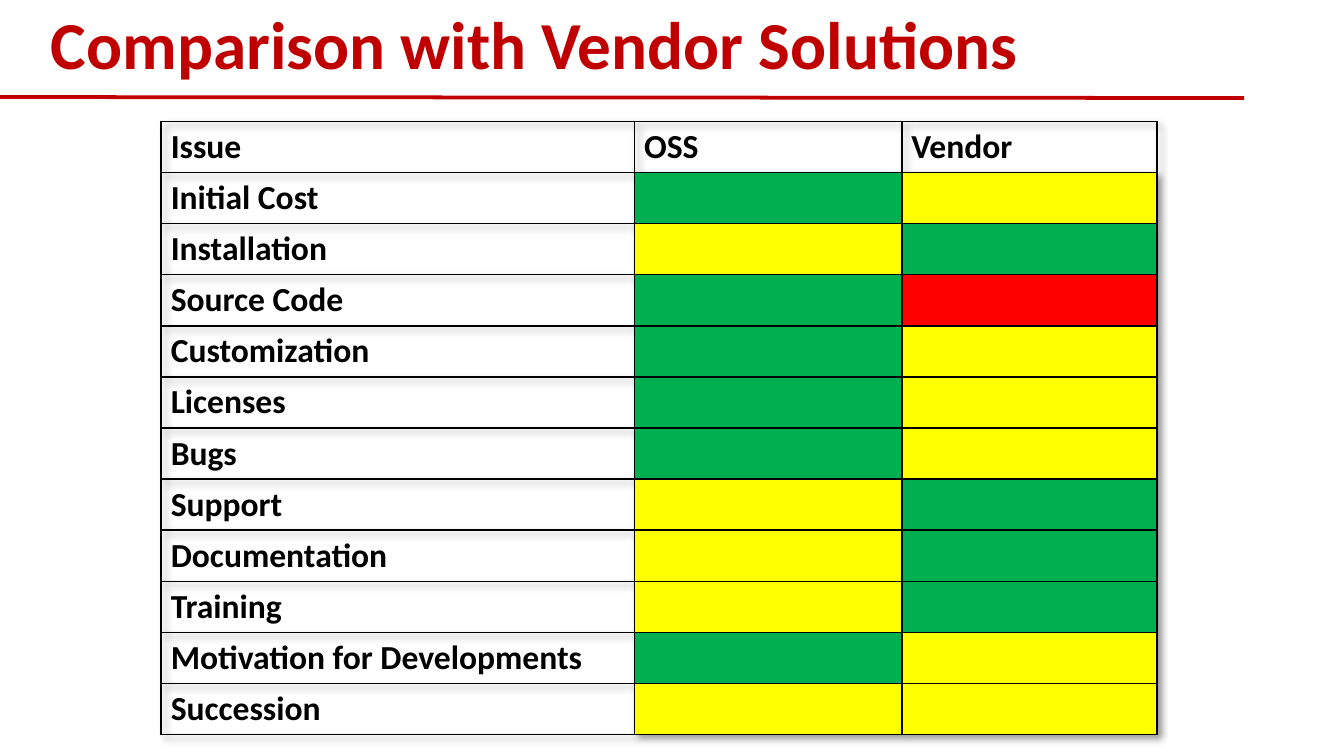
from lxml import etree
from pptx import Presentation
from pptx.dml.color import RGBColor
from pptx.enum.shapes import MSO_CONNECTOR
from pptx.enum.text import MSO_ANCHOR
from pptx.oxml import parse_xml
from pptx.oxml.ns import qn
from pptx.util import Pt

STRAIGHT = MSO_CONNECTOR.STRAIGHT
BOTTOM = MSO_ANCHOR.BOTTOM
DRAWING_NS = "http://schemas.openxmlformats.org/drawingml/2006/main"

TITLE = "Comparison with Vendor Solutions"
HEADINGS = ("Issue", "OSS", "Vendor")
RATINGS = [
    ("Initial Cost", "good", "fair"),
    ("Installation", "fair", "good"),
    ("Source Code", "good", "poor"),
    ("Customization", "good", "fair"),
    ("Licenses", "good", "fair"),
    ("Bugs", "good", "fair"),
    ("Support", "fair", "good"),
    ("Documentation", "fair", "good"),
    ("Training", "fair", "good"),
    ("Motivation for Developments", "good", "fair"),
    ("Succession", "fair", "fair"),
]

THEME = {
    "font": "Calibri",
    "title_size": 36,
    "table_size": 18,
    "accent": "C00000",
    "ink": "000000",
    "good": "00B050",
    "fair": "FFFF00",
    "poor": "FF0000",
}

SLIDE_SIZE = (720, 405)
TITLE_BOX = (20.2, -13, 552, 64.8)
TITLE_INSET = 7.2
RULE = (0, 52, 666.5, 52.5)
RULE_WIDTH = 2
TABLE_LEFT, TABLE_TOP = 86.4, 65
COLUMN_WIDTHS = (253.6, 143.2, 136.8)
ROW_HEIGHT = 27.4
CELL_INSET_X, CELL_INSET_Y = 5.1, 2.7
BORDER_WIDTH = 1


def points(values):
    return [Pt(value) for value in values]


def color(name):
    return RGBColor.from_string(THEME[name])


def style_text(frame, size, ink):
    for run in frame.paragraphs[0].runs:
        run.font.name = THEME["font"]
        run.font.size = Pt(THEME[size])
        run.font.bold = True
        run.font.color.rgb = color(ink)


def add_title(slide):
    frame = slide.shapes.add_textbox(*points(TITLE_BOX)).text_frame
    frame.word_wrap = True
    frame.vertical_anchor = BOTTOM
    frame.margin_left = frame.margin_right = Pt(TITLE_INSET)
    frame.margin_top = frame.margin_bottom = Pt(TITLE_INSET)
    frame.text = TITLE
    style_text(frame, "title_size", "accent")


def add_rule(slide):
    rule = slide.shapes.add_connector(STRAIGHT, *points(RULE))
    rule.line.color.rgb = color("accent")
    rule.line.width = Pt(RULE_WIDTH)
    etree.SubElement(rule._element.spPr, qn("a:effectLst"))


def add_borders(cell):
    """Put the four side lines ahead of the fill, as the schema orders them."""
    properties = cell._tc.get_or_add_tcPr()
    for index, side in enumerate(("lnL", "lnR", "lnT", "lnB")):
        properties.insert(index, parse_xml(
            f'<a:{side} xmlns:a="{DRAWING_NS}" w="{Pt(BORDER_WIDTH)}"><a:solidFill>'
            f'<a:srgbClr val="{THEME["ink"]}"/></a:solidFill></a:{side}>'))


def add_table_shadow(table):
    table._tbl.tblPr.insert(0, parse_xml(
        f'<a:effectLst xmlns:a="{DRAWING_NS}"><a:outerShdw blurRad="{Pt(4)}" '
        f'dist="{Pt(3)}" dir="2700000" algn="tl" rotWithShape="0">'
        f'<a:srgbClr val="{THEME["ink"]}"><a:alpha val="40000"/></a:srgbClr>'
        '</a:outerShdw></a:effectLst>'))


def fill_cell(cell, entry, is_rating):
    cell.margin_left = cell.margin_right = Pt(CELL_INSET_X)
    cell.margin_top = cell.margin_bottom = Pt(CELL_INSET_Y)
    if is_rating:
        cell.fill.solid()
        cell.fill.fore_color.rgb = color(entry)
    else:
        cell.fill.background()
        cell.text_frame.text = entry
        style_text(cell.text_frame, "table_size", "ink")
    add_borders(cell)


def add_ratings_table(slide):
    rows = [HEADINGS, *RATINGS]
    box = (TABLE_LEFT, TABLE_TOP, sum(COLUMN_WIDTHS), ROW_HEIGHT * len(rows))
    table = slide.shapes.add_table(len(rows), len(HEADINGS), *points(box)).table
    table.first_row = table.horz_banding = False
    add_table_shadow(table)
    for column, width in zip(table.columns, COLUMN_WIDTHS):
        column.width = Pt(width)
    for r, entries in enumerate(rows):
        table.rows[r].height = Pt(ROW_HEIGHT)
        for c, entry in enumerate(entries):
            fill_cell(table.cell(r, c), entry, is_rating=r > 0 and c > 0)


def main():
    presentation = Presentation()
    presentation.slide_width, presentation.slide_height = points(SLIDE_SIZE)
    slide = presentation.slides.add_slide(presentation.slide_layouts[6])
    add_title(slide)
    add_ratings_table(slide)
    add_rule(slide)
    presentation.save("out.pptx")


if __name__ == "__main__":
    main()
